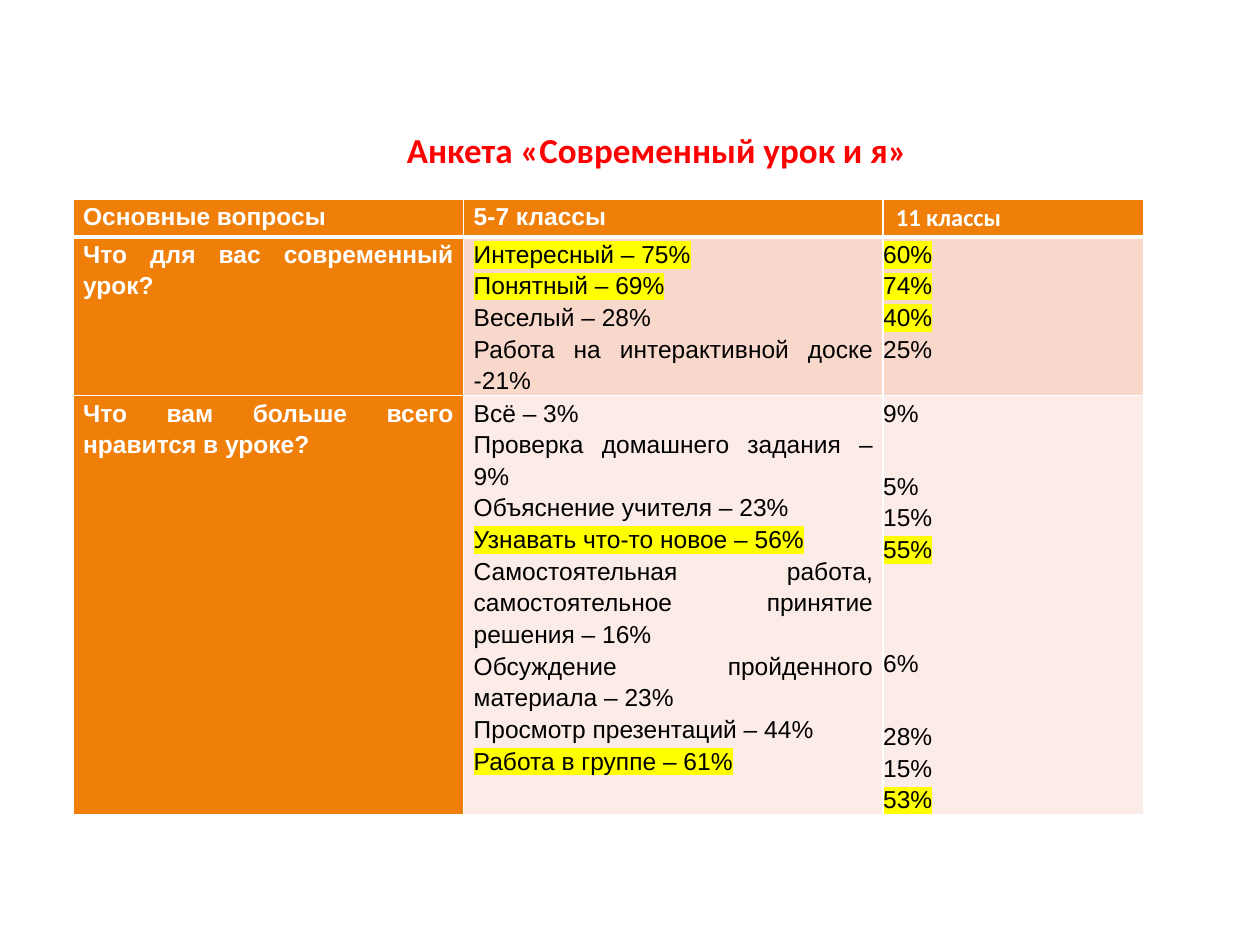
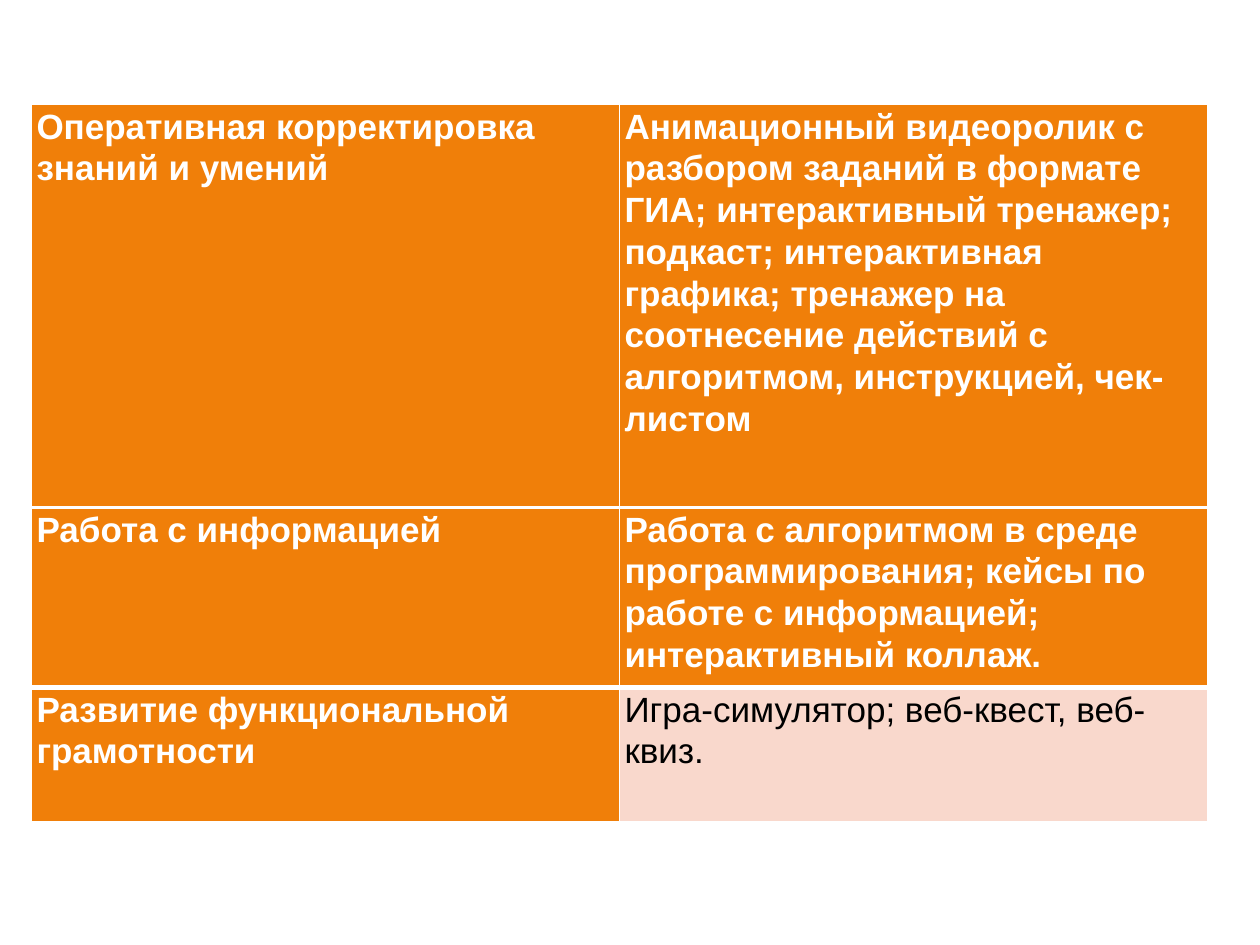
from dataclasses import dataclass, field
from typing import Any

from lxml.etree import SubElement
from pptx import Presentation
from pptx.dml.color import RGBColor
from pptx.enum.text import MSO_ANCHOR, PP_ALIGN
from pptx.oxml.ns import qn
from pptx.util import Inches, Pt

SLIDE_WIDTH, SLIDE_HEIGHT = Inches(10), Inches(7.5)


@dataclass(frozen=True)
class Theme:
    orange: str = "F07F09"
    pink: str = "F9D8CC"
    pale: str = "FCECE7"
    white: str = "FFFFFF"
    black: str = "000000"
    red: str = "FF0000"
    marker: str = "FFFF00"
    body_font: str = "Arial"
    title_font: str = "Calibri"
    survey_size: float = 14
    method_size: float = 20
    title_size: float = 20
    skipped_line: float = 23.6
    thin_border: float = 1
    thick_border: float = 3


THEME = Theme()


@dataclass(frozen=True)
class Line:
    """A paragraph; skipped counts the empty lines left above it."""
    text: str
    marked: bool = False
    skipped: int = 0


@dataclass(frozen=True)
class Cell:
    lines: list[Line]
    fill: str = THEME.orange
    font: str = THEME.body_font
    inset: float | None = None
    indent: float = 0

    @property
    def is_heading(self) -> bool:
        return self.fill == THEME.orange


@dataclass(frozen=True)
class Grid:
    """A table whose place, columns and rows are percentages of the slide."""
    left: float
    top: float
    columns: list[float]
    rows: list[float]
    cells: list[list[Cell]]
    size: float
    spacing: float
    inset: float
    alignment: Any = PP_ALIGN.LEFT
    thick_rows: set[int] = field(default_factory=lambda: {0})


def across(percent: float) -> int:
    return round(SLIDE_WIDTH * percent / 100)


def down(percent: float) -> int:
    return round(SLIDE_HEIGHT * percent / 100)


def apply(target: Any, values: dict[str, Any]) -> None:
    for name, value in values.items():
        setattr(target, name, value)


def write_paragraph(paragraph, line: Line, font: str, size: float, color: str,
                    bold: bool, indent: float, layout: dict[str, Any]) -> None:
    apply(paragraph, layout)
    if line.skipped:
        paragraph.space_before = Pt(line.skipped * THEME.skipped_line)
    if indent:
        paragraph._p.get_or_add_pPr().set("indent", str(Inches(indent)))
    run = paragraph.add_run()
    run.text = line.text
    run.font.color.rgb = RGBColor.from_string(color)
    if line.marked:
        highlight = SubElement(run._r.get_or_add_rPr(), qn("a:highlight"))
        SubElement(highlight, qn("a:srgbClr"), val=THEME.marker)
    apply(run.font, {"name": font, "size": Pt(size), "bold": bold})


def draw_borders(cell, bottom: float) -> None:
    properties = cell._tc.get_or_add_tcPr()
    widths = dict.fromkeys(("lnL", "lnR", "lnT"), THEME.thin_border) | {"lnB": bottom}
    for position, (side, width) in enumerate(widths.items()):
        border = SubElement(properties, qn(f"a:{side}"), w=str(Pt(width)))
        fill = SubElement(border, qn("a:solidFill"))
        SubElement(fill, qn("a:srgbClr"), val=THEME.white)
        properties.insert(position, border)


def fill_cell(cell, content: Cell, grid: Grid, bottom: float) -> None:
    inset = Inches(grid.inset if content.inset is None else content.inset)
    apply(cell, {"margin_left": inset, "margin_right": inset,
                 "margin_top": 0, "margin_bottom": 0})
    cell.fill.solid()
    cell.fill.fore_color.rgb = RGBColor.from_string(content.fill)
    draw_borders(cell, bottom)
    color = THEME.white if content.is_heading else THEME.black
    layout = {"alignment": grid.alignment, "line_spacing": grid.spacing}
    frame = cell.text_frame
    for index, line in enumerate(content.lines):
        paragraph = frame.add_paragraph() if index else frame.paragraphs[0]
        write_paragraph(paragraph, line, content.font, grid.size, color,
                        content.is_heading, content.indent, layout)


def draw_grid(slide, grid: Grid) -> None:
    table = slide.shapes.add_table(
        len(grid.rows), len(grid.columns), across(grid.left), down(grid.top),
        across(sum(grid.columns)), down(sum(grid.rows))).table
    apply(table, {"first_row": False, "horz_banding": False})
    for column, width in zip(table.columns, grid.columns):
        column.width = across(width)
    for row_index, (row, height) in enumerate(zip(table.rows, grid.rows)):
        row.height = down(height)
        bottom = THEME.thick_border if row_index in grid.thick_rows else THEME.thin_border
        for cell, content in zip(row.cells, grid.cells[row_index]):
            fill_cell(cell, content, grid, bottom)


def draw_title(slide, text: str) -> None:
    box = slide.shapes.add_textbox(across(28.5), down(12.8), across(46.3), down(9.87))
    frame = box.text_frame
    apply(frame, {"word_wrap": False, "vertical_anchor": MSO_ANCHOR.TOP,
                  "margin_top": Inches(0.06)})
    write_paragraph(frame.paragraphs[0], Line(text), THEME.title_font, THEME.title_size,
                    THEME.red, True, 0.1, {"alignment": PP_ALIGN.CENTER})


def heading(text: str) -> Cell:
    return Cell([Line(text)])


def senior(lines: list[Line], fill: str) -> Cell:
    return Cell(lines, fill, inset=0)


SURVEY = Grid(
    left=5.8, top=21.07, columns=[31, 33.3, 20.7], rows=[4, 16.8, 44.4],
    size=THEME.survey_size, spacing=1.15, inset=0.08, alignment=PP_ALIGN.JUSTIFY,
    cells=[
        [heading("Основные вопросы"), heading("5-7 классы"),
         Cell([Line("11 классы")], font=THEME.title_font, inset=0, indent=0.1)],
        [heading("Что для вас современный урок?"),
         Cell([Line("Интересный – 75%", marked=True),
               Line("Понятный – 69%", marked=True),
               Line("Веселый – 28%"),
               Line("Работа на интерактивной доске -21%")], THEME.pink),
         senior([Line("60%", marked=True), Line("74%", marked=True),
                 Line("40%", marked=True), Line("25%")], THEME.pink)],
        [heading("Что вам больше всего нравится в уроке?"),
         Cell([Line("Всё – 3%"),
               Line("Проверка домашнего задания –9%"),
               Line("Объяснение учителя – 23%"),
               Line("Узнавать что-то новое – 56%", marked=True),
               Line("Самостоятельная работа, самостоятельное принятие решения – 16%"),
               Line("Обсуждение пройденного материала – 23%"),
               Line("Просмотр презентаций – 44%"),
               Line("Работа в группе – 61%", marked=True)], THEME.pale),
         senior([Line("9%"), Line("5%", skipped=1), Line("15%"),
                 Line("55%", marked=True), Line("6%", skipped=2),
                 Line("28%", skipped=1), Line("15%"),
                 Line("53%", marked=True)], THEME.pale)],
    ])


def method_grid(top: float, rows: list[float], cells: list[list[Cell]]) -> Grid:
    return Grid(left=2.5, top=top, columns=[46.67] * 2, rows=rows, cells=cells,
                size=THEME.method_size, spacing=1.07, inset=0.04)


METHODS = [
    method_grid(11.07, [42.67], [
        [heading("Оперативная корректировка знаний и умений"),
         heading("Анимационный видеоролик с разбором заданий в формате ГИА; "
                 "интерактивный тренажер; подкаст; интерактивная графика; тренажер "
                 "на соотнесение действий с алгоритмом, инструкцией, чек-листом")]]),
    method_grid(53.73, [19, 14.2], [
        [heading("Работа с информацией"),
         heading("Работа с алгоритмом в среде программирования; кейсы по работе "
                 "с информацией; интерактивный коллаж.")],
        [heading("Развитие функциональной грамотности"),
         Cell([Line("Игра-симулятор; веб-квест, веб-квиз.")], THEME.pink)]]),
]


def main() -> None:
    presentation = Presentation()
    apply(presentation, {"slide_width": SLIDE_WIDTH, "slide_height": SLIDE_HEIGHT})
    blank = presentation.slide_layouts[6]

    survey_slide = presentation.slides.add_slide(blank)
    draw_grid(survey_slide, SURVEY)
    draw_title(survey_slide, "Анкета «Современный урок и я»")

    method_slide = presentation.slides.add_slide(blank)
    for grid in METHODS:
        draw_grid(method_slide, grid)

    presentation.save("out.pptx")


if __name__ == "__main__":
    main()
